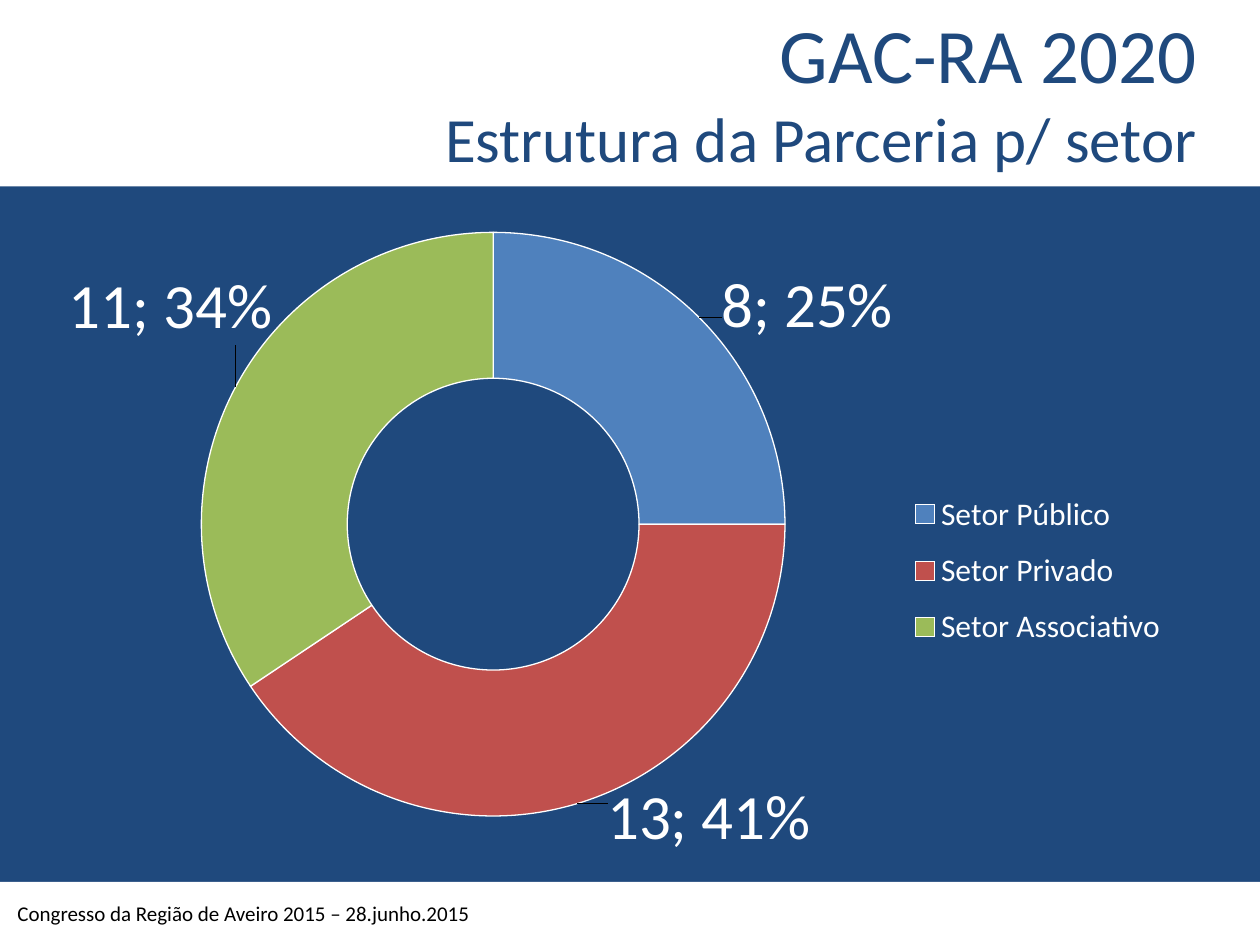
import pptx
import pptx.chart.data
import pptx.dml.color
import pptx.enum.chart
import pptx.enum.shapes
import pptx.enum.text
import pptx.oxml
import pptx.oxml.ns
import pptx.util

Pt = pptx.util.Pt
RGBColor = pptx.dml.color.RGBColor
qn = pptx.oxml.ns.qn

NAVY = RGBColor(0x1F, 0x49, 0x7D)
WHITE = RGBColor(0xFF, 0xFF, 0xFF)
BLACK = RGBColor(0, 0, 0)
FONT = "Calibri"
WIDTH, HEIGHT = 720, 540

# Sector: members, colour, label offset as fractions of the chart
SECTORS = {
    "Setor Público": (8, RGBColor(0x4F, 0x81, 0xBD), (0.14, -0.095)),
    "Setor Privado": (13, RGBColor(0xC0, 0x50, 0x4D), (0.134, 0.127)),
    "Setor Associativo": (11, RGBColor(0x9B, 0xBB, 0x59), (-0.114, -0.171)),
}


def format_font(font, size, color):
    font.name = FONT
    font.size = Pt(size)
    font.color.rgb = color


def write(paragraph, text, size=12, color=BLACK):
    run = paragraph.add_run()
    run.text = text
    format_font(run.font, size, color)


def set_margins(frame, left, top, right, bottom):
    frame.margin_left, frame.margin_top = Pt(left), Pt(top)
    frame.margin_right, frame.margin_bottom = Pt(right), Pt(bottom)


def set_layout(parent, index, **values):
    """Give a chart part a manual layout, in fractions of the chart."""
    for old in parent.findall(qn("c:layout")):
        parent.remove(old)
    settings = "".join(f'<c:{key} val="{value}"/>' for key, value in values.items())
    parent.insert(index, pptx.oxml.parse_xml(
        f'<c:layout {pptx.oxml.ns.nsdecls("c")}><c:manualLayout>{settings}'
        "</c:manualLayout></c:layout>"))


def add_band(slide, left, top, width, height):
    band = slide.shapes.add_shape(
        pptx.enum.shapes.MSO_SHAPE.RECTANGLE, Pt(left), Pt(top), Pt(width), Pt(height))
    band.shadow.inherit = False
    band.fill.solid()
    band.fill.fore_color.rgb = WHITE
    band.line.fill.background()


def place_title(slide, left, top, width, height):
    title = slide.shapes.title
    title.left, title.top = Pt(left), Pt(top)
    title.width, title.height = Pt(width), Pt(height)
    frame = title.text_frame
    frame.word_wrap = True
    frame.auto_size = pptx.enum.text.MSO_AUTO_SIZE.NONE
    frame.vertical_anchor = pptx.enum.text.MSO_ANCHOR.BOTTOM
    set_margins(frame, 0, 3.6, 0, 0)
    heading = frame.paragraphs[0]
    heading.alignment = pptx.enum.text.PP_ALIGN.RIGHT
    write(heading, "GAC-RA 2020", size=44, color=NAVY)
    heading.add_line_break()
    write(heading, "Estrutura da Parceria p/ setor", size=36, color=NAVY)


def add_sector_chart(slide, left, top, width, height):
    data = pptx.chart.data.CategoryChartData()
    data.categories = list(SECTORS)
    data.add_series("Series 1", [members for members, _, _ in SECTORS.values()])
    chart = slide.shapes.add_chart(
        pptx.enum.chart.XL_CHART_TYPE.DOUGHNUT,
        Pt(left), Pt(top), Pt(width), Pt(height), data).chart
    format_font(chart.font, 18, WHITE)
    chart.has_title = False
    plot = chart.plots[0]
    plot.vary_by_categories = True
    set_layout(chart._chartSpace.chart.plotArea, 0, layoutTarget="inner",
               xMode="edge", yMode="edge", x=0.125, y=0.042, w=0.513, h=0.877)

    # Legend
    chart.has_legend = True
    chart.legend.position = pptx.enum.chart.XL_LEGEND_POSITION.RIGHT
    chart.legend.include_in_layout = False
    format_font(chart.legend.font, 18, WHITE)
    set_layout(chart.legend._element, 1, xMode="edge", yMode="edge",
               x=0.74, y=0.41, w=0.24, h=0.28)

    # Labels and slices
    ring = plot.series[0]
    labels = ring.data_labels
    labels.show_value = labels.show_percentage = True
    format_font(labels.font, 36, WHITE)
    for index, (_, color, (dx, dy)) in enumerate(SECTORS.values()):
        point = ring.points[index]
        point.format.fill.solid()
        point.format.fill.fore_color.rgb = color
        point.format.line.color.rgb = WHITE
        point.format.line.width = Pt(0.75)
        format_font(point.data_label.font, 36, WHITE)
        label = labels._element.findall(qn("c:dLbl"))[index]
        label.find(qn("c:showPercent")).set("val", "1")
        set_layout(label, 1, x=dx, y=dy)
        label.append(pptx.oxml.parse_xml(
            f'<c:separator {pptx.oxml.ns.nsdecls("c")}>; </c:separator>'))


def add_footer(slide, left, top, width, height):
    frame = slide.shapes.add_textbox(
        Pt(left), Pt(top), Pt(width), Pt(height)).text_frame
    frame.word_wrap = True
    frame.vertical_anchor = pptx.enum.text.MSO_ANCHOR.MIDDLE
    write(frame.paragraphs[0], "Congresso da Região de Aveiro 2015 – 28.junho.2015")


def main():
    deck = pptx.Presentation()
    deck.slide_width, deck.slide_height = Pt(WIDTH), Pt(HEIGHT)
    slide = deck.slides.add_slide(deck.slide_layouts[5])
    slide.background.fill.solid()
    slide.background.fill.fore_color.rgb = NAVY

    # White bands, moved behind the title
    add_band(slide, 0, 504, WIDTH, 36)
    add_band(slide, 0, 0, WIDTH, 106.5)
    title = slide.shapes.title._element
    title.getparent().append(title)

    place_title(slide, 36.7, 10, 647.3, 90)
    add_sector_chart(slide, 33.8, 116.6, 650.2, 380.9)
    add_footer(slide, 2.9, 507.6, 314.6, 28.8)
    deck.save("out.pptx")


if __name__ == "__main__":
    main()
